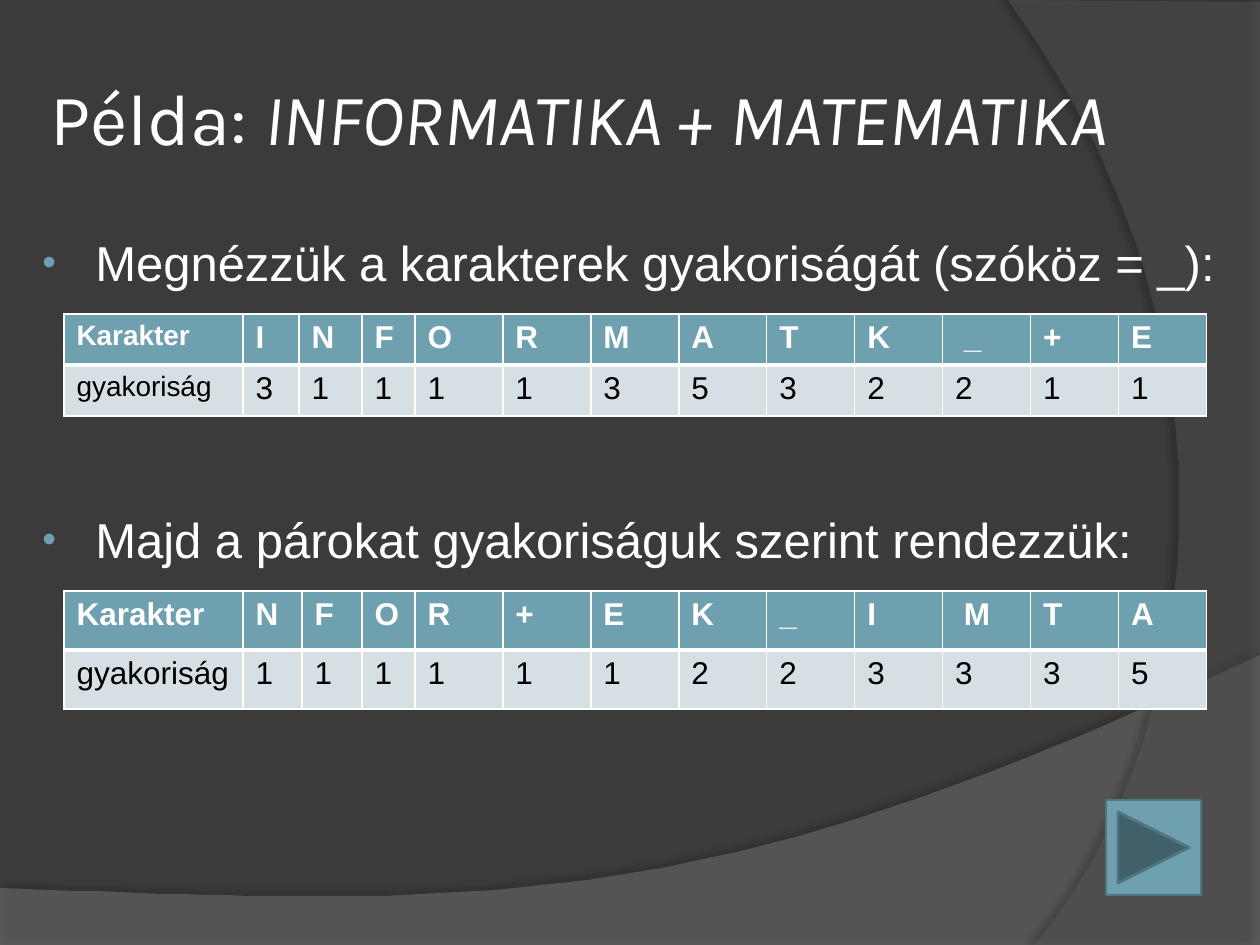
from lxml import etree
from pptx import Presentation
from pptx.dml.color import RGBColor
from pptx.enum.shapes import MSO_SHAPE
from pptx.enum.text import MSO_ANCHOR
from pptx.oxml.ns import qn
from pptx.util import Emu, Pt

NEXT = MSO_SHAPE.ACTION_BUTTON_FORWARD_OR_NEXT
MIDDLE = MSO_ANCHOR.MIDDLE
SCALE = 914400 / 126
WHITE, TEAL, PALE = "FFFFFF", "6EA0B0", "D5DFE4"

TITLE = ["Példa: ", "INFORMATIKA + MATEMATIKA"]
POINTS = [
    "Megnézzük a karakterek gyakoriságát (szóköz = _):",
    "Majd a párokat gyakoriságuk szerint rendezzük:",
]
FOUND = [
    ["Karakter", "I", "N", "F", "O", "R", "M", "A", "T", "K", " _", "+", "E"],
    ["gyakoriság", 3, 1, 1, 1, 1, 3, 5, 3, 2, 2, 1, 1],
]
SORTED = [
    ["Karakter", "N", "F", "O", "R", "+", "E", "K", "_", "I", " M", "T", "A"],
    ["gyakoriság", 1, 1, 1, 1, 1, 1, 2, 2, 3, 3, 3, 5],
]


def px(*nums):
    return [Emu(round(n * SCALE)) for n in nums]


def color(code):
    return RGBColor.from_string(code)


def add_node(parent, tag, **attrs):
    node = etree.SubElement(parent, qn(tag))
    for key, value in attrs.items():
        node.set(key, str(value))
    return node


def style(run, size, code=WHITE, face="Arial", bold=False):
    font = run.font
    font.size, font.name, font.bold = Pt(size), face, bold
    font.color.rgb = color(code)


def curve(p0, p1, p2, p3, steps=60):
    """Points along a cubic Bézier curve."""
    points = []
    for i in range(steps + 1):
        t = i / steps
        u = 1 - t
        points.append(tuple(
            u**3 * a + 3 * u * u * t * b + 3 * u * t * t * c + t**3 * d
            for a, b, c, d in zip(p0, p1, p2, p3)))
    return points


def add_wave(slide, points, fill, alpha, shade, dist, angle):
    """Translucent outline with a soft shadow; alpha and shade in percent."""
    pen = slide.shapes.build_freeform(*points[0], scale=SCALE)
    pen.add_line_segments(points[1:])
    wave = pen.convert_to_shape()
    wave.fill.solid()
    wave.fill.fore_color.rgb = color(fill)
    wave.line.fill.background()
    wave.shadow.inherit = False
    props = wave.element.spPr
    tint = props.find(qn("a:solidFill")).find(qn("a:srgbClr"))
    add_node(tint, "a:alpha", val=alpha * 1000)
    shadow = add_node(props.find(qn("a:effectLst")), "a:outerShdw",
                      blurRad=Pt(4), dist=Pt(dist), dir=angle * 60000,
                      algn="ctr", rotWithShape=0)
    dark = add_node(shadow, "a:srgbClr", val="000000")
    add_node(dark, "a:alpha", val=shade * 1000)


def add_box(slide, place):
    frame = slide.shapes.add_textbox(*px(*place)).text_frame
    frame.word_wrap = True
    return frame


def add_title(slide):
    frame = add_box(slide, (44, 38, 1181, 158))
    frame.vertical_anchor = MIDDLE
    frame.margin_left, frame.margin_right = px(6, 6)
    for text in TITLE:
        run = frame.paragraphs[0].add_run()
        run.text = text
        style(run, 41.4, face="Karla")
    run.font.italic = True


def add_points(slide):
    frame = add_box(slide, (25, 220, 1211, 624))
    frame.margin_top, = px(12)
    left, hang = px(58, -53)
    for i, text in enumerate(POINTS):
        para = frame.add_paragraph() if i else frame.paragraphs[0]
        para.text = text
        para.space_before = Pt(125 if i else 0)
        style(para.runs[0], 28)
        props = para._p.get_or_add_pPr()
        props.set("marL", str(left))
        props.set("indent", str(hang))
        tint = add_node(props, "a:buClr")
        add_node(tint, "a:srgbClr", val=TEAL)
        add_node(props, "a:buSzPct", val=80000)
        add_node(props, "a:buFont", typeface="Arial")
        add_node(props, "a:buChar", char="•")


def add_edges(cell, head):
    """White cell borders, thick between head and counts."""
    thick = "B" if head else "T"
    for side in "LRTB":
        width = Pt(3 if side == thick else 1)
        line = add_node(cell._tc.get_or_add_tcPr(), f"a:ln{side}", w=width)
        fill = add_node(line, "a:solidFill")
        add_node(fill, "a:srgbClr", val=WHITE)


def add_grid(slide, data, top, tall, starts, label):
    widths = starts + [88] * (len(data[0]) - len(starts))
    place = px(64, top, sum(widths), tall * len(data))
    grid = slide.shapes.add_table(len(data), len(widths), *place).table
    for column, width in zip(grid.columns, px(*widths)):
        column.width = width
    for r, values in enumerate(data):
        head = r == 0
        grid.rows[r].height, = px(tall)
        for c, value in enumerate(values):
            cell = grid.cell(r, c)
            cell.text_frame.text = str(value)
            style(cell.text_frame.paragraphs[0].runs[0], 18 if c else label,
                  WHITE if head else "000000", bold=head)
            add_edges(cell, head)
            cell.fill.solid()
            cell.fill.fore_color.rgb = color(TEAL if head else PALE)


def add_button(slide):
    button = slide.shapes.add_shape(NEXT, *px(1106, 800, 95, 95))
    button.shadow.inherit = False
    button.fill.solid()
    button.fill.fore_color.rgb = color(TEAL)
    button.line.color.rgb = color("517682")
    button.line.width = Pt(1.5)


def main():
    deck = Presentation()
    deck.slide_width, deck.slide_height = px(1260, 945)
    slide = deck.slides.add_slide(deck.slide_layouts[6])
    back = slide.background.fill
    back.solid()
    back.fore_color.rgb = color("3B3B3B")

    floor = curve((1260, 655), (704, 919), (493, 906), (0, 888))
    add_wave(slide, floor + [(0, 945), (1260, 945)], "7F7F7F", 45, 35, 3.5, 270)
    side = curve((1034, 945), (1178, 780), (1283, 378), (1008, 0))
    add_wave(slide, side + [(1260, 2), (1260, 945)], "5E5E5E", 40, 45, 4, 180)

    add_title(slide)
    add_points(slide)
    add_button(slide)
    add_grid(slide, FOUND, 314, 51, [179, 56, 63, 53], 16)
    add_grid(slide, SORTED, 591, 59, [179, 59, 60, 53], 18)
    deck.save("out.pptx")


if __name__ == "__main__":
    main()
